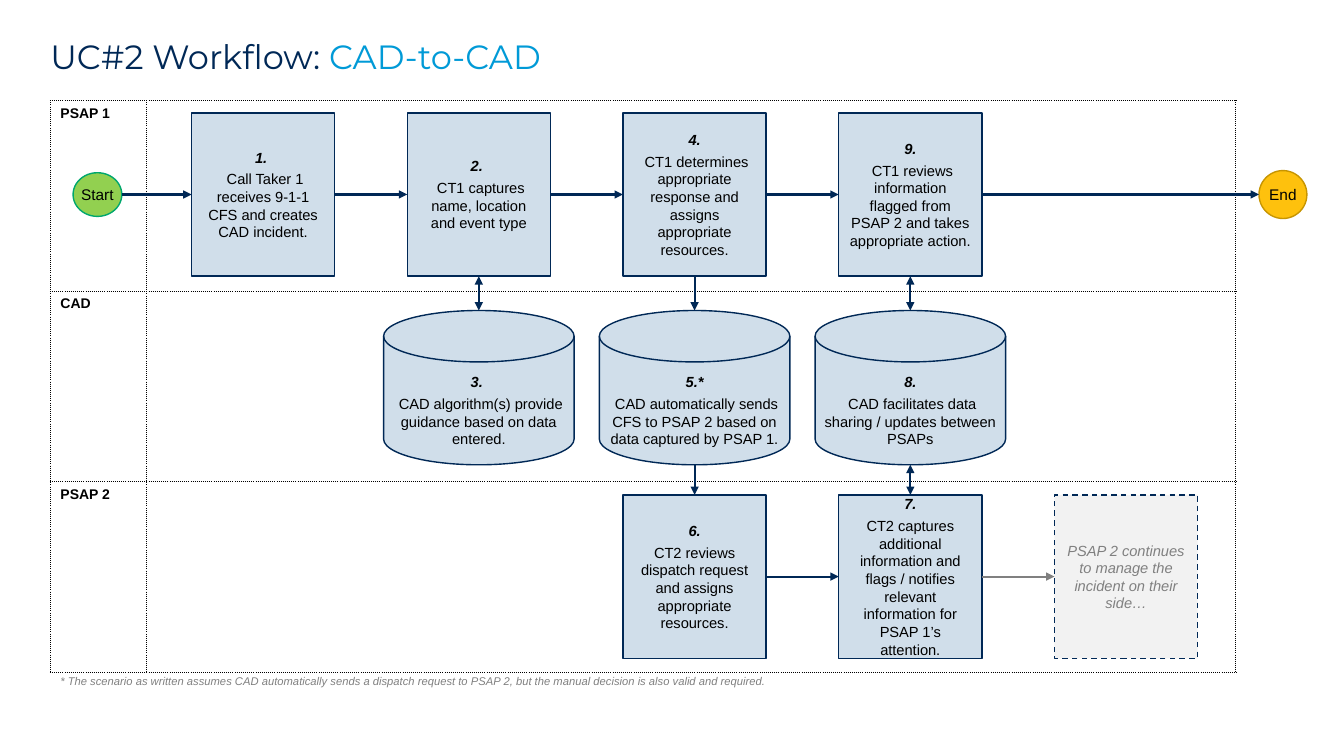
from dataclasses import dataclass

from lxml import etree
from pptx import Presentation
from pptx.dml.color import RGBColor
from pptx.enum.dml import MSO_LINE
from pptx.enum.shapes import MSO_CONNECTOR, MSO_SHAPE
from pptx.enum.text import MSO_ANCHOR, PP_ALIGN
from pptx.oxml.ns import qn
from pptx.util import Pt

RECT = MSO_SHAPE.RECTANGLE
DISK = MSO_SHAPE.FLOWCHART_MAGNETIC_DISK
OVAL = MSO_SHAPE.OVAL
STRAIGHT = MSO_CONNECTOR.STRAIGHT
DASH = MSO_LINE.DASH
TOP, MIDDLE = MSO_ANCHOR.TOP, MSO_ANCHOR.MIDDLE
LEFT, CENTER = PP_ALIGN.LEFT, PP_ALIGN.CENTER
N, W, S, E = range(4)


@dataclass(frozen=True)
class Theme:
    title_font: str = "Montserrat"
    font: str = "Arial"
    navy: str = "002856"
    sky: str = "009AD7"
    black: str = "000000"
    gray: str = "808080"
    pale: str = "F2F2F2"
    step: str = "D0DEEA"
    green: str = "92D050"
    green_line: str = "00A76D"
    amber: str = "FEC10D"
    amber_line: str = "C79501"
    title_size: float = 24
    end_size: float = 11
    step_size: float = 10.5
    lane_size: float = 10
    note_size: float = 8


T = Theme()

FIRST_X, PITCH = 136.8, 154.1
BOX_W, BOX_H = 102.3, 116.7
DISK_W, DISK_H = 136.1, 110.2
PSAP1_Y, CAD_Y, PSAP2_Y = 80.6, 221.8, 353.5

STEPS = {
    1: (RECT, 0, PSAP1_Y, "1. ", " Call Taker 1 receives 9-1-1 CFS and creates CAD incident."),
    2: (RECT, 1, PSAP1_Y, "2. ", " CT1 captures name, location and event type"),
    3: (DISK, 1, CAD_Y, "3. ", " CAD algorithm(s) provide guidance based on data entered."),
    4: (RECT, 2, PSAP1_Y, "4.", " CT1 determines appropriate response and assigns appropriate resources."),
    5: (DISK, 2, CAD_Y, "5.*", " CAD automatically sends CFS to PSAP 2 based on data captured by PSAP 1."),
    6: (RECT, 2, PSAP2_Y, "6.", "CT2 reviews dispatch request and assigns appropriate resources."),
    7: (RECT, 3, PSAP2_Y, "7.", "CT2 captures additional information and flags / notifies "
        "relevant information for PSAP 1’s attention."),
    8: (DISK, 3, CAD_Y, "8.", " CAD facilitates data sharing / updates between PSAPs"),
    9: (RECT, 3, PSAP1_Y, "9.", " CT1 reviews information flagged from PSAP 2 and takes appropriate action."),
}


def rgb(color):
    return RGBColor.from_string(color)


def add_run(p, text, size, color=T.black, font=T.font, bold=False, italic=False):
    r = p.add_run()
    r.text = text
    r.font.size = Pt(size)
    r.font.name = font
    r.font.bold = bold
    r.font.italic = italic
    r.font.color.rgb = rgb(color)


def set_frame(tf, margins, wrap=True, anchor=TOP):
    tf.word_wrap = wrap
    tf.vertical_anchor = anchor
    tf.margin_left, tf.margin_top, tf.margin_right, tf.margin_bottom = map(Pt, margins)


def add_paragraph(tf, first=False, align=CENTER, after=3):
    p = tf.paragraphs[0] if first else tf.add_paragraph()
    p.alignment = align
    p.space_after = Pt(after)
    return p


def add_text(s, left, top, width, height, margins, wrap, after=0):
    tf = s.shapes.add_textbox(Pt(left), Pt(top), Pt(width), Pt(height)).text_frame
    set_frame(tf, margins, wrap)
    return add_paragraph(tf, True, LEFT, after)


def add_node(s, kind, left, top, width, height, fill, line, margins=(7.2, 3.6, 7.2, 3.6)):
    sp = s.shapes.add_shape(kind, Pt(left), Pt(top), Pt(width), Pt(height))
    sp.shadow.inherit = False
    sp.fill.solid()
    sp.fill.fore_color.rgb = rgb(fill)
    sp.line.color.rgb = rgb(line)
    sp.line.width = Pt(1)
    set_frame(sp.text_frame, margins, kind != OVAL, MIDDLE)
    return sp


def add_step(s, kind, column, top, number, text):
    left = FIRST_X + column * PITCH
    if kind == DISK:
        sp = add_node(s, kind, left - (DISK_W - BOX_W) / 2, top, DISK_W, DISK_H,
                      T.step, T.navy, (0, 14.4, 0, 0))
    else:
        sp = add_node(s, kind, left, top, BOX_W, BOX_H, T.step, T.navy)
    tf = sp.text_frame
    add_run(add_paragraph(tf, True), number, T.step_size, bold=True, italic=True)
    add_run(add_paragraph(tf), text, T.step_size)
    return sp


def add_terminal(s, left, width, height, label, fill, line):
    top = PSAP1_Y + (BOX_H - height) / 2
    sp = add_node(s, OVAL, left, top, width, height, fill, line)
    add_run(add_paragraph(sp.text_frame, True), label, T.end_size)
    return sp


def side_point(sp, side):
    dx, dy = {N: (1, 0), W: (0, 1), S: (1, 2), E: (2, 1)}[side]
    return sp.left + sp.width * dx // 2, sp.top + sp.height * dy // 2


def add_arrow(s, source, source_side, target, target_side, color=T.navy, both=False):
    cx = s.shapes.add_connector(STRAIGHT, *side_point(source, source_side),
                                *side_point(target, target_side))
    if source.auto_shape_type == RECT:
        cx.begin_connect(source, source_side)
    if target.auto_shape_type == RECT:
        cx.end_connect(target, target_side)
    cx.line.color.rgb = rgb(color)
    cx.line.width = Pt(1.5)
    ln = cx.line._get_or_add_ln()
    for tag in ("a:headEnd", "a:tailEnd") if both else ("a:tailEnd",):
        etree.SubElement(ln, qn(tag), type="triangle")
    etree.SubElement(cx._element.spPr, qn("a:effectLst"))


def add_borders(cell):
    tcPr = cell._tc.get_or_add_tcPr()
    for side in "LRTB":
        ln = etree.SubElement(tcPr, qn(f"a:ln{side}"), w=str(Pt(1)))
        fill = etree.SubElement(ln, qn("a:solidFill"))
        etree.SubElement(fill, qn("a:srgbClr"), val=T.black)
        etree.SubElement(ln, qn("a:prstDash"), val="sysDot")


def add_lanes(s, names):
    table = s.shapes.add_table(len(names), 2, Pt(36), Pt(72), Pt(846.7), Pt(408.3)).table
    table.first_row = table.horz_banding = False
    for column, width in zip(table.columns, (68.4, 778.3)):
        column.width = Pt(width)
    for row, name in zip(table.rows, names):
        row.height = Pt(136.1)
        for cell in row.cells:
            add_borders(cell)
            cell.fill.background()
        add_run(row.cells[0].text_frame.paragraphs[0], name, T.lane_size, bold=True)


def main():
    prs = Presentation()
    prs.slide_width, prs.slide_height = Pt(960), Pt(540)
    s = prs.slides.add_slide(prs.slide_layouts[6])

    p = add_text(s, 36, 28.8, 888, 34.6, (0, 0, 0, 0), True, 12)
    p.line_spacing = 0.9
    add_run(p, "UC#2 Workflow: ", T.title_size, T.navy, T.title_font)
    add_run(p, "CAD-to-CAD", T.title_size, T.sky, T.title_font)

    add_lanes(s, ("PSAP 1", "CAD", "PSAP 2"))
    steps = {key: add_step(s, *step) for key, step in STEPS.items()}
    start = add_terminal(s, 52.2, 34.8, 31.2, "Start", T.green, T.green_line)
    end = add_terminal(s, 899.3, 34.2, 34.2, "End", T.amber, T.amber_line)
    later = add_node(s, RECT, FIRST_X + 4 * PITCH, PSAP2_Y, BOX_W, BOX_H, T.pale, T.navy)
    later.line.dash_style = DASH
    add_run(add_paragraph(later.text_frame, True),
            "PSAP 2 continues to manage the incident on their side…",
            T.step_size, T.gray, italic=True)

    top_row = [start, steps[1], steps[2], steps[4], steps[9], end]
    for source, target in zip(top_row, top_row[1:]):
        add_arrow(s, source, E, target, W)
    add_arrow(s, steps[6], E, steps[7], W)
    add_arrow(s, steps[7], E, later, W, T.gray)
    for upper, lower, both in ((2, 3, True), (4, 5, False), (5, 6, False),
                               (9, 8, True), (8, 7, True)):
        add_arrow(s, steps[upper], S, steps[lower], N, both=both)

    note = add_text(s, 36, 478.1, 520.6, 17.3, (7.2, 3.6, 7.2, 3.6), False)
    add_run(note, "* The scenario as written assumes CAD automatically sends a dispatch request "
            "to PSAP 2, but the manual decision is also valid and required.",
            T.note_size, T.gray, italic=True)
    prs.save("out.pptx")


if __name__ == "__main__":
    main()
